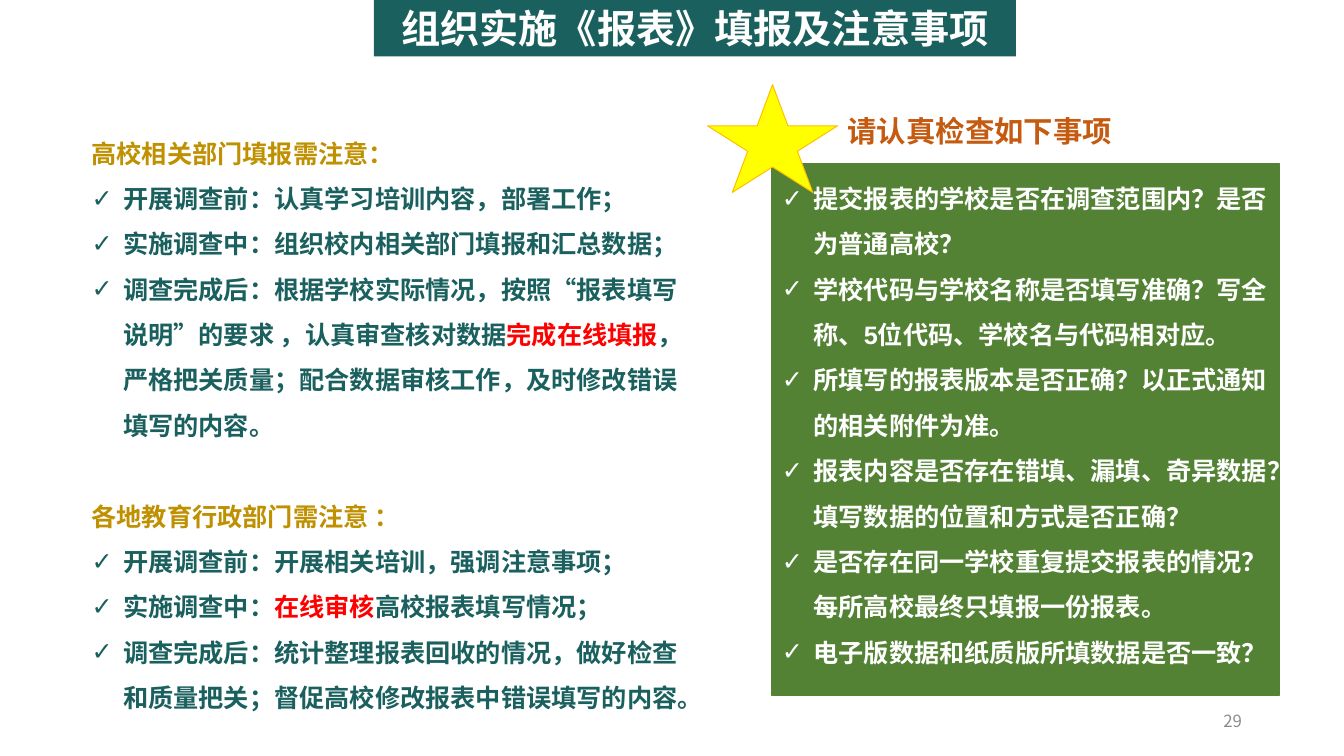
from lxml import etree
from pptx import Presentation
from pptx.dml.color import RGBColor
from pptx.enum import lang, shapes, text
from pptx.oxml import ns
from pptx.util import Pt

COLORS = {
    "teal": "1A605E", "white": "FFFFFF", "gold": "BF9000", "red": "FF0000",
    "green": "548235", "yellow": "FFFF00", "amber": "FFC000",
    "orange": "C55A11", "gray": "8C8C8C",
}
CJK_FONT = "Noto Sans CJK SC"
INDENT = Pt(22.5)
BODY = {"size": Pt(18), "bold": True, "name": CJK_FONT}
CHECK_BODY = {**BODY, "name": "Arial"}

SCHOOL_NOTES = [
    [("开展调查前：认真学习培训内容，部署工作；", "teal")],
    [("实施调查中：组织校内相关部门填报和汇总数据；", "teal")],
    [("调查完成后：根据学校实际情况，按照“报表填写说明”的要求 ，认真审查核对数据", "teal"),
     ("完成在线填报", "red"),
     ("，严格把关质量；配合数据审核工作，及时修改错误填写的内容。", "teal")],
]
AUTHORITY_NOTES = [
    [("开展调查前：开展相关培训，强调注意事项；", "teal")],
    [("实施调查中：", "teal"), ("在线审核", "red"), ("高校报表填写情况；", "teal")],
    [("调查完成后：统计整理报表回收的情况，做好检查和质量把关；"
      "督促高校修改报表中错误填写的内容。", "teal")],
]
CHECKS = [
    "提交报表的学校是否在调查范围内？是否为普通高校？",
    "学校代码与学校名称是否填写准确？写全称、5位代码、学校名与代码相对应。",
    "所填写的报表版本是否正确？以正式通知的相关附件为准。",
    "报表内容是否存在错填、漏填、奇异数据？填写数据的位置和方式是否正确？",
    "是否存在同一学校重复提交报表的情况？每所高校最终只填报一份报表。",
    "电子版数据和纸质版所填数据是否一致？",
]


def rgb(color):
    return RGBColor.from_string(COLORS[color])


def set_attributes(target, values):
    for name, value in values.items():
        setattr(target, name, value)


def add_bullet(paragraph):
    properties = paragraph._p.get_or_add_pPr()
    properties.set("marL", str(INDENT))
    properties.set("indent", str(-INDENT))
    etree.SubElement(properties, ns.qn("a:buFont"), typeface="Arial")
    etree.SubElement(properties, ns.qn("a:buChar"), char="✓")


def add_run(paragraph, content, color, font_format):
    run = paragraph.add_run()
    run.text = content
    set_attributes(run.font, font_format)
    run.font.language_id = lang.MSO_LANGUAGE_ID.SIMPLIFIED_CHINESE
    run.font.color.rgb = rgb(color)
    etree.SubElement(run._r.get_or_add_rPr(), ns.qn("a:ea"), typeface=CJK_FONT)


def write_paragraph(frame, runs, font_format, bullet=False, **paragraph_format):
    paragraph = frame.paragraphs[0]
    if paragraph.runs:
        paragraph = frame.add_paragraph()
    set_attributes(paragraph, {"alignment": text.PP_ALIGN.LEFT, **paragraph_format})
    if bullet:
        add_bullet(paragraph)
    for content, color in runs:
        add_run(paragraph, content, color, font_format)


def write_list(frame, items, font_format):
    for runs in items:
        write_paragraph(frame, runs, font_format, bullet=True, line_spacing=1.5)


def add_shape(slide, kind, box, fill, line=None, line_width=1):
    shape = slide.shapes.add_shape(kind, *map(Pt, box))
    shape.shadow.inherit = False
    shape.fill.solid()
    shape.fill.fore_color.rgb = rgb(fill)
    if line:
        shape.line.color.rgb = rgb(line)
        shape.line.width = Pt(line_width)
    else:
        shape.line.fill.background()
    return shape


def add_text_frame(slide, box, anchor=text.MSO_ANCHOR.TOP):
    frame = slide.shapes.add_textbox(*map(Pt, box)).text_frame
    set_attributes(frame, {"word_wrap": True, "vertical_anchor": anchor})
    return frame


def add_title(slide):
    banner = add_shape(slide, shapes.MSO_SHAPE.RECTANGLE, (267.1, 0, 458.6, 40.3), "teal")
    frame = banner.text_frame
    frame.vertical_anchor = text.MSO_ANCHOR.MIDDLE
    write_paragraph(frame, [("组织实施《报表》填报及注意事项", "white")],
                    {**BODY, "size": Pt(28)}, alignment=text.PP_ALIGN.CENTER)


def add_notices(slide):
    frame = add_text_frame(slide, (58.3, 84.2, 437.8, 461.5))
    sections = [
        ("高校相关部门填报需注意：", SCHOOL_NOTES, 0),
        ("各地教育行政部门需注意 ：", AUTHORITY_NOTES, 32.4),
    ]
    for heading, notes, gap in sections:
        write_paragraph(frame, [(heading, "gold")], BODY,
                        line_spacing=1.5, space_before=Pt(gap))
        write_list(frame, notes, BODY)


def add_checklist(slide):
    panel = add_shape(slide, shapes.MSO_SHAPE.RECTANGLE,
                      (551.5, 116.6, 362.2, 380.2), "green", "green")
    panel.text_frame.vertical_anchor = text.MSO_ANCHOR.TOP
    write_list(panel.text_frame, [[(check, "white")] for check in CHECKS], CHECK_BODY)
    add_shape(slide, shapes.MSO_SHAPE.STAR_5_POINT,
              (505.4, 60.5, 92.9, 77), "yellow", "amber", 0.75)
    heading = add_text_frame(slide, (598.3, 77, 254.2, 32.4))
    write_paragraph(heading, [("请认真检查如下事项", "orange")], {**BODY, "size": Pt(21)})


def add_page_number(slide):
    frame = add_text_frame(slide, (678.2, 500.4, 216, 28.8), text.MSO_ANCHOR.MIDDLE)
    write_paragraph(frame, [("29", "gray")], {"size": Pt(12), "name": CJK_FONT},
                    alignment=text.PP_ALIGN.RIGHT)


def main():
    presentation = Presentation()
    set_attributes(presentation, {"slide_width": Pt(960), "slide_height": Pt(540)})
    slide = presentation.slides.add_slide(presentation.slide_layouts[6])
    add_title(slide)
    add_notices(slide)
    add_checklist(slide)
    add_page_number(slide)
    presentation.save("out.pptx")


if __name__ == "__main__":
    main()
